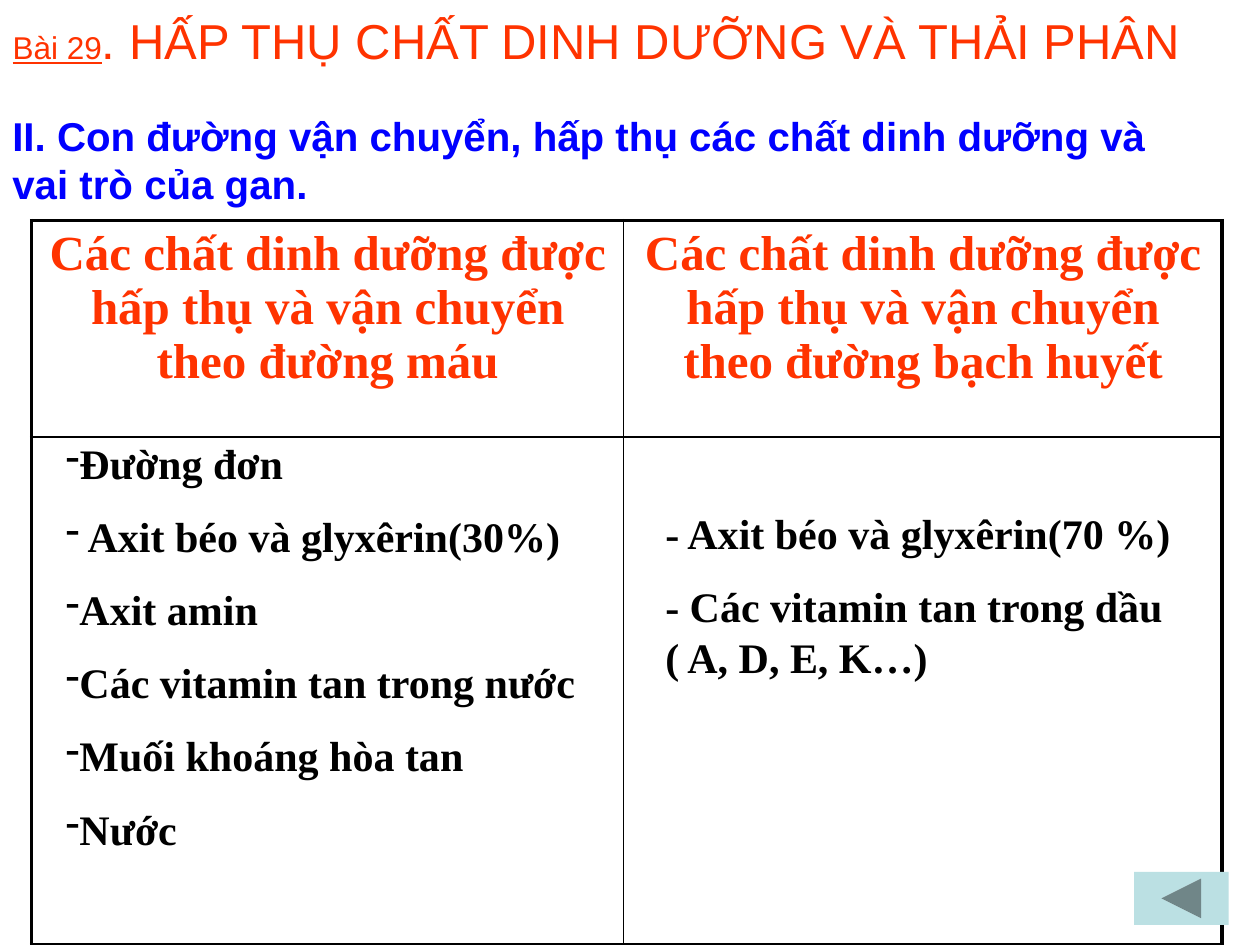
from dataclasses import dataclass

from lxml import etree
from pptx import Presentation
from pptx import util as u
from pptx.dml.color import RGBColor
from pptx.enum import shapes, text
from pptx.oxml import ns

ORANGE = RGBColor(0xFF, 0x33, 0x00)
BLUE = RGBColor(0x00, 0x00, 0xFF)
BLACK = RGBColor(0x00, 0x00, 0x00)
WHITE = RGBColor(0xFF, 0xFF, 0xFF)
PALE_TEAL = RGBColor(0xBB, 0xE0, 0xE3)
SANS = "Arial"
SERIF = "Times New Roman"
THICK = 2.25
THIN = 1


@dataclass(frozen=True)
class Box:
    left: float
    top: float
    width: float
    height: float


@dataclass(frozen=True)
class Style:
    font: str
    size: float
    color: RGBColor
    bold: bool = False
    underline: bool = False


@dataclass(frozen=True)
class NutrientList:
    box: Box
    bullet: str
    items: tuple[str, ...]


LESSON = Style(SANS, 18, ORANGE, underline=True)
TITLE = Style(SANS, 28, ORANGE)
SECTION = Style(SANS, 23, BLUE, bold=True)
HEADER = Style(SERIF, 28, ORANGE, bold=True)
ITEM = Style(SERIF, 24, BLACK, bold=True)

TABLE_BOX = Box(18, 126, 680.4, 414)
COLUMN_WIDTHS = (338.4, 342)
ROW_HEIGHTS = (123.84, 290.16)
HEADERS = (
    "Các chất dinh dưỡng được hấp thụ và vận chuyển theo đường máu",
    "Các chất dinh dưỡng được hấp thụ và vận chuyển theo đường bạch huyết",
)
LISTS = (
    NutrientList(
        Box(30.24, 246.24, 334.8, 298.08),
        "-",
        (
            "Đường đơn",
            " Axit béo và glyxêrin(30%)",
            "Axit amin",
            "Các vitamin tan trong nước",
            "Muối khoáng hòa tan",
            "Nước",
        ),
    ),
    NutrientList(
        Box(372.96, 286.56, 324, 108.72),
        "",
        ("- Axit béo và glyxêrin(70 %)", "- Các vitamin tan trong dầu \n( A, D, E, K…)"),
    ),
)


def place(shape, box: Box) -> None:
    shape.left, shape.top = u.Pt(box.left), u.Pt(box.top)
    shape.width, shape.height = u.Pt(box.width), u.Pt(box.height)


def prepare_frame(frame, anchor) -> None:
    frame.word_wrap = True
    frame.auto_size = text.MSO_AUTO_SIZE.NONE
    frame.vertical_anchor = anchor
    frame.margin_left = frame.margin_right = u.Pt(7.2)
    frame.margin_top = frame.margin_bottom = u.Pt(3.6)


def add_run(paragraph, words: str, style: Style) -> None:
    run = paragraph.add_run()
    run.text = words
    run.font.name = style.font
    run.font.size = u.Pt(style.size)
    run.font.color.rgb = style.color
    run.font.bold = style.bold
    run.font.underline = style.underline


def set_bullet(paragraph, bullet: str) -> None:
    properties = paragraph._p.get_or_add_pPr()
    properties.set("marL", "0")
    properties.set("indent", "0")
    if bullet:
        etree.SubElement(properties, ns.qn("a:buFontTx"))
        etree.SubElement(properties, ns.qn("a:buChar")).set("char", bullet)
    else:
        etree.SubElement(properties, ns.qn("a:buNone"))


def fill_list(placeholder, nutrients: NutrientList) -> None:
    place(placeholder, nutrients.box)
    frame = placeholder.text_frame
    prepare_frame(frame, text.MSO_ANCHOR.TOP)
    for index, item in enumerate(nutrients.items):
        paragraph = frame.add_paragraph() if index else frame.paragraphs[0]
        paragraph.space_before = u.Pt(13)
        set_bullet(paragraph, nutrients.bullet)
        for number, line in enumerate(item.split("\n")):
            if number:
                paragraph.add_line_break()
            add_run(paragraph, line, ITEM)


def set_border(cell, side: str, width: float) -> None:
    line = etree.SubElement(cell._tc.get_or_add_tcPr(), ns.qn(f"a:{side}"))
    line.set("w", str(u.Pt(width)))
    fill = etree.SubElement(line, ns.qn("a:solidFill"))
    etree.SubElement(fill, ns.qn("a:srgbClr")).set("val", str(BLACK))


def add_nutrient_table(slide) -> None:
    frame = slide.shapes.add_table(
        2, 2, u.Pt(TABLE_BOX.left), u.Pt(TABLE_BOX.top),
        u.Pt(TABLE_BOX.width), u.Pt(TABLE_BOX.height),
    )
    table = frame.table
    table.first_row = table.horz_banding = False
    for column, width in zip(table.columns, COLUMN_WIDTHS):
        column.width = u.Pt(width)
    for row, height in zip(table.rows, ROW_HEIGHTS):
        row.height = u.Pt(height)
    for row in range(2):
        for column in range(2):
            cell = table.cell(row, column)
            outer = {"lnL": column == 0, "lnR": column == 1, "lnT": row == 0, "lnB": row == 1}
            for side, is_outer in outer.items():
                set_border(cell, side, THICK if is_outer else THIN)
            if row == 0:
                cell.fill.solid()
                cell.fill.fore_color.rgb = WHITE
                paragraph = cell.text_frame.paragraphs[0]
                paragraph.alignment = text.PP_ALIGN.CENTER
                add_run(paragraph, HEADERS[column], HEADER)
            else:
                cell.fill.background()


def add_section(slide) -> None:
    box = slide.shapes.add_textbox(0, u.Pt(59.76), u.Pt(684), u.Pt(65.52))
    prepare_frame(box.text_frame, text.MSO_ANCHOR.TOP)
    add_run(
        box.text_frame.paragraphs[0],
        "II. Con đường vận chuyển, hấp thụ các chất dinh dưỡng và vai trò của gan.",
        SECTION,
    )


def add_back_button(slide) -> None:
    button = slide.shapes.add_shape(
        shapes.MSO_SHAPE.ACTION_BUTTON_BACK_OR_PREVIOUS,
        u.Pt(648), u.Pt(498.24), u.Pt(54), u.Pt(30.24),
    )
    button.shadow.inherit = False
    button.fill.solid()
    button.fill.fore_color.rgb = PALE_TEAL
    button.line.fill.background()


def main() -> None:
    presentation = Presentation()
    presentation.slide_width, presentation.slide_height = u.Pt(720), u.Pt(540)
    slide = presentation.slides.add_slide(presentation.slide_layouts[3])
    title, *bodies = list(slide.placeholders)[:3]
    place(title, Box(0, 0, 771.12, 45.36))
    prepare_frame(title.text_frame, text.MSO_ANCHOR.MIDDLE)
    heading = title.text_frame.paragraphs[0]
    heading.alignment = text.PP_ALIGN.LEFT
    add_run(heading, "Bài 29", LESSON)
    add_run(heading, ". HẤP THỤ CHẤT DINH DƯỠNG VÀ THẢI PHÂN", TITLE)
    for body, nutrients in zip(bodies, LISTS):
        fill_list(body, nutrients)
    add_nutrient_table(slide)
    add_section(slide)
    add_back_button(slide)
    presentation.save("out.pptx")


if __name__ == "__main__":
    main()
